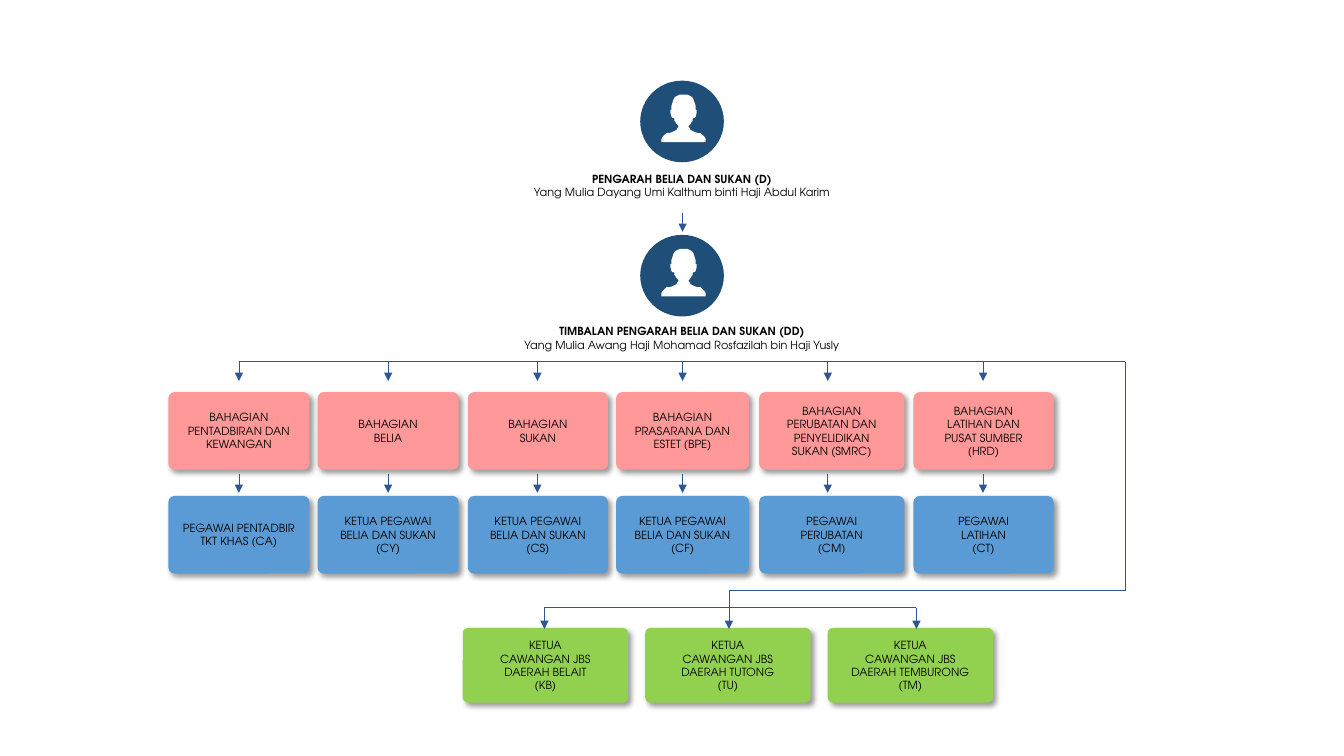
"""Organisation chart of a youth and sports department."""
from lxml import etree
from pptx import Presentation
from pptx.dml.color import RGBColor
from pptx.enum.shapes import MSO_CONNECTOR, MSO_SHAPE
from pptx.enum.text import MSO_ANCHOR, PP_ALIGN
from pptx.oxml import parse_xml
from pptx.oxml.ns import qn
from pptx.util import Inches, Pt

STRAIGHT = MSO_CONNECTOR.STRAIGHT
ROUNDED, OVAL = MSO_SHAPE.ROUNDED_RECTANGLE, MSO_SHAPE.OVAL
CENTER, MIDDLE, TOP = PP_ALIGN.CENTER, MSO_ANCHOR.MIDDLE, MSO_ANCHOR.TOP
FONT = "TeX Gyre Adventor"
BLACK, WHITE = RGBColor(0, 0, 0), RGBColor(255, 255, 255)
PINK, BLUE = RGBColor(0xFF, 0x99, 0x99), RGBColor(0x5B, 0x9B, 0xD5)
GREEN, NAVY = RGBColor(0x92, 0xD0, 0x50), RGBColor(0x1F, 0x4E, 0x79)
LINE_BLUE = RGBColor(0x2F, 0x55, 0x97)
SHADOW = (
    '<a:effectLst xmlns:a="http://schemas.openxmlformats.org/drawingml/2006/main">'
    '<a:outerShdw blurRad="50800" dist="38100" dir="2700000" algn="tl" rotWithShape="0">'
    '<a:srgbClr val="000000"><a:alpha val="40000"/></a:srgbClr></a:outerShdw></a:effectLst>'
)

LEADERS = [
    (0.8, 1.66, ["PENGARAH BELIA DAN SUKAN (D)",
                 "Yang Mulia Dayang Umi Kalthum binti Haji Abdul Karim"]),
    (2.33, 3.17, ["TIMBALAN PENGARAH BELIA DAN SUKAN (DD)",
                  "Yang Mulia Awang Haji Mohamad Rosfazilah bin Haji Yusly"]),
]
DIVISIONS = [
    (1.67, 1.4, 2.37, ["BAHAGIAN", "PENTADBIRAN DAN", "KEWANGAN"],
     ["PEGAWAI PENTADBIR", "TKT KHAS (CA)"]),
    (3.15, 1.4, 3.85, ["BAHAGIAN", "BELIA"],
     ["KETUA PEGAWAI", "BELIA DAN SUKAN", "(CY)"]),
    (4.64, 1.39, 5.33, ["BAHAGIAN", "SUKAN"],
     ["KETUA PEGAWAI", "BELIA DAN SUKAN", "(CS)"]),
    (6.11, 1.32, 6.77, ["BAHAGIAN", "PRASARANA DAN", "ESTET (BPE)"],
     ["KETUA PEGAWAI", "BELIA DAN SUKAN", "(CF)"]),
    (7.53, 1.44, 8.21, ["BAHAGIAN", "PERUBATAN DAN", "PENYELIDIKAN", "SUKAN (SMRC)"],
     ["PEGAWAI", "PERUBATAN", "(CM)"]),
    (9.06, 1.39, 9.75, ["BAHAGIAN", "LATIHAN DAN", "PUSAT SUMBER", "(HRD)"],
     ["PEGAWAI", "LATIHAN", "(CT)"]),
]
BRANCHES = [
    (5.4, ["KETUA", "CAWANGAN JBS", "DAERAH BELAIT", "(KB)"]),
    (7.23, ["KETUA", "CAWANGAN JBS", "DAERAH TUTONG", "(TU)"]),
    (9.09, ["KETUA", "CAWANGAN JBS", "DAERAH TEMBURONG", "(TM)"]),
]
PERSON_HALF = [
    (0, 0), (0.04, 0), (0.06, 0.01), (0.08, 0.02), (0.09, 0.03), (0.1, 0.05),
    (0.11, 0.08), (0.12, 0.11), (0.12, 0.15), (0.13, 0.15), (0.13, 0.18),
    (0.12, 0.22), (0.11, 0.23), (0.1, 0.23), (0.09, 0.24), (0.09, 0.26),
    (0.08, 0.27), (0.07, 0.29), (0.06, 0.3), (0.05, 0.31), (0.05, 0.32),
    (0.06, 0.33), (0.07, 0.35), (0.09, 0.36), (0.11, 0.37), (0.14, 0.38),
    (0.17, 0.38), (0.19, 0.4), (0.21, 0.42), (0.22, 0.44), (0.22, 0.47),
]
LEADER_X, TRUNK_X = 6.77, 11.16
TRUNK_TOP, TRUNK_BOTTOM, BRANCH_RAIL = 3.59, 5.86, 6.03
DIVISION_TOP, OFFICER_TOP, BRANCH_TOP = 3.89, 4.92, 6.23
BRANCH_LEFT, BRANCH_STEP, BRANCH_WIDTH = 4.59, 1.81, 1.64
ARROW_LENGTH = 0.19


def write_text(shape, lines, anchor=MIDDLE, bold_first=False, size=8):
    frame = shape.text_frame
    frame.word_wrap = True
    frame.vertical_anchor = anchor
    frame.margin_left = frame.margin_right = 0
    for index, line in enumerate(lines):
        paragraph = frame.paragraphs[0] if index == 0 else frame.add_paragraph()
        paragraph.alignment = CENTER
        run = paragraph.add_run()
        run.text = line
        run.font.name, run.font.size = FONT, Pt(size)
        run.font.bold = bold_first and index == 0
        run.font.color.rgb = BLACK


def paint(shape, color):
    shape.shadow.inherit = False
    shape.fill.solid()
    shape.fill.fore_color.rgb = color
    shape.line.fill.background()


def add_box(slide, left, top, width, height, color, lines, corner=0.08):
    box = slide.shapes.add_shape(ROUNDED, Inches(left), Inches(top), Inches(width), Inches(height))
    box.adjustments[0] = corner
    paint(box, color)
    properties = box._element.spPr
    properties.replace(properties.find(qn("a:effectLst")), parse_xml(SHADOW))
    write_text(box, lines)


def add_line(slide, x1, y1, x2, y2, arrow=False):
    line = slide.shapes.add_connector(STRAIGHT, Inches(x1), Inches(y1), Inches(x2), Inches(y2))
    line.line.color.rgb = LINE_BLUE
    line.line.width = Pt(0.5)
    if arrow:
        etree.SubElement(line.line._get_or_add_ln(), qn("a:tailEnd"), type="triangle")
    etree.SubElement(line._element.spPr, qn("a:effectLst"))


def add_leader(slide, top, caption_top, lines):
    disc = slide.shapes.add_shape(OVAL, Inches(6.35), Inches(top), Inches(0.83), Inches(0.81))
    paint(disc, NAVY)
    outline = PERSON_HALF + [(-x, y) for x, y in reversed(PERSON_HALF[1:])]
    points = [(Inches(6.78 + x), Inches(top + 0.14 + y)) for x, y in outline]
    builder = slide.shapes.build_freeform(*points[0], scale=1.0)
    builder.add_line_segments(points[1:], close=True)
    paint(builder.convert_to_shape(), WHITE)
    caption = slide.shapes.add_textbox(Inches(3.89), Inches(caption_top), Inches(5.75), Inches(0.37))
    write_text(caption, lines, anchor=TOP, bold_first=True)


def main():
    deck = Presentation()
    deck.slide_width, deck.slide_height = Inches(13.33), Inches(7.5)
    slide = deck.slides.add_slide(deck.slide_layouts[6])

    for leader in LEADERS:
        add_leader(slide, *leader)
    add_line(slide, LEADER_X, 2.11, LEADER_X, 2.11 + ARROW_LENGTH, arrow=True)

    for left, width, arrow_x, division, officer in DIVISIONS:
        add_box(slide, left, DIVISION_TOP, width, 0.77, PINK, division)
        add_box(slide, left, OFFICER_TOP, width, 0.77, BLUE, officer)
        for arrow_top in (TRUNK_TOP, 4.7):
            add_line(slide, arrow_x, arrow_top, arrow_x, arrow_top + ARROW_LENGTH, arrow=True)

    for index, (arrow_x, branch) in enumerate(BRANCHES):
        left = BRANCH_LEFT + index * BRANCH_STEP
        add_box(slide, left, BRANCH_TOP, BRANCH_WIDTH, 0.74, GREEN, branch, corner=0.07)
        start = TRUNK_BOTTOM if index == 1 else BRANCH_RAIL
        add_line(slide, arrow_x, start, arrow_x, BRANCH_TOP + 0.01, arrow=True)

    first_branch_x, middle_branch_x, last_branch_x = [x for x, _ in BRANCHES]
    add_line(slide, DIVISIONS[0][2], TRUNK_TOP, TRUNK_X, TRUNK_TOP)
    add_line(slide, TRUNK_X, TRUNK_TOP, TRUNK_X, TRUNK_BOTTOM)
    add_line(slide, TRUNK_X, TRUNK_BOTTOM, middle_branch_x, TRUNK_BOTTOM)
    add_line(slide, first_branch_x, BRANCH_RAIL, last_branch_x, BRANCH_RAIL)

    deck.save("out.pptx")


if __name__ == "__main__":
    main()
